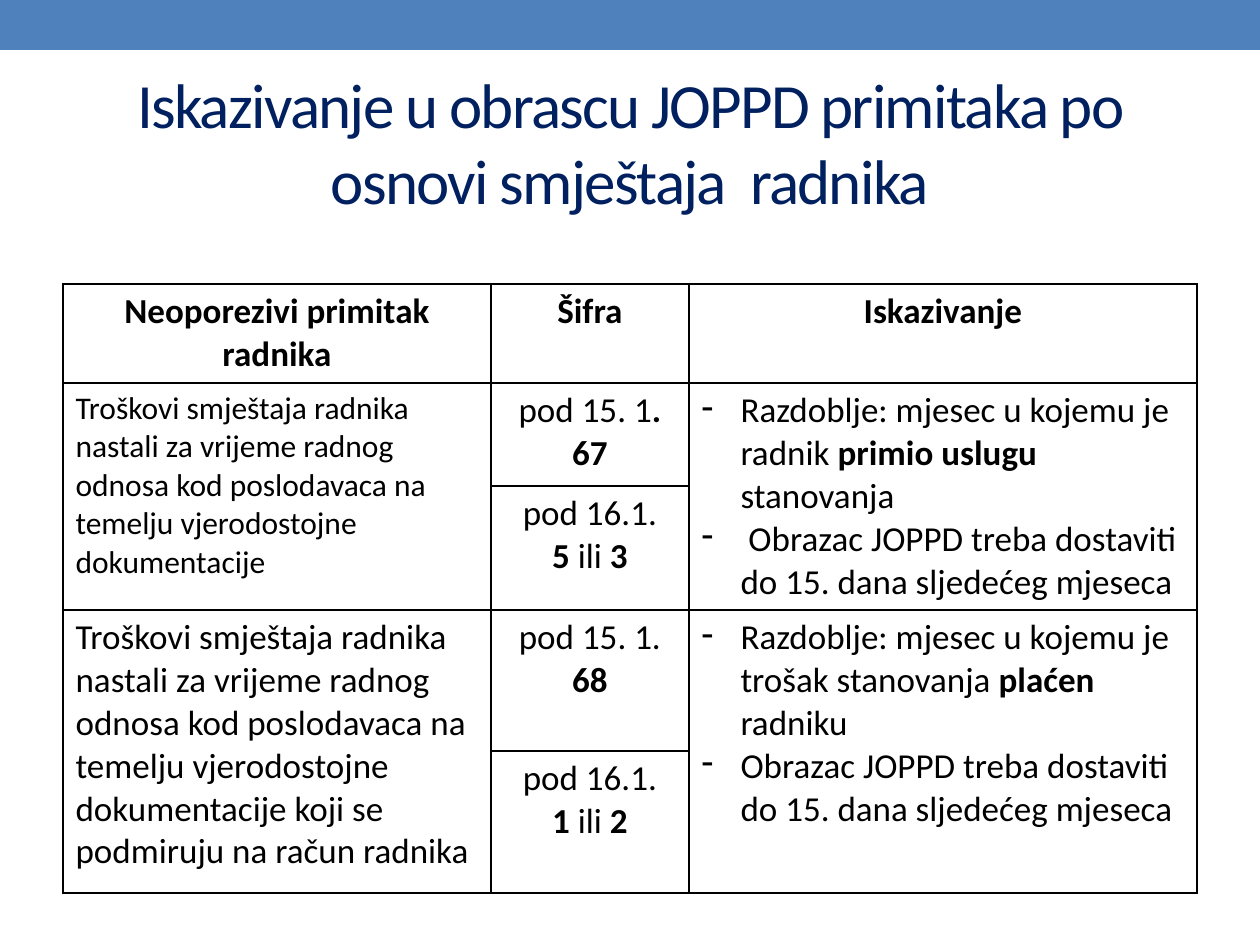
from lxml.etree import SubElement
from pptx import Presentation
from pptx.dml.color import RGBColor
from pptx.enum.shapes import MSO_SHAPE as Shape
from pptx.enum.text import MSO_ANCHOR as Anchor, MSO_AUTO_SIZE as AutoSize, PP_ALIGN as Align
from pptx.oxml import parse_xml
from pptx.oxml.ns import nsdecls, qn
from pptx.util import Emu, Pt

BLUE = RGBColor(0x4F, 0x81, 0xBD)
NAVY = RGBColor(0x00, 0x20, 0x60)
BLACK = RGBColor(0, 0, 0)
FONT = "Calibri"

TITLE = "Iskazivanje u obrascu JOPPD primitaka po osnovi smještaja  radnika"
HEADERS = ["Neoporezivi primitak radnika", "Šifra", "Iskazivanje"]
EXPENSE = ("Troškovi smještaja radnika nastali za vrijeme radnog odnosa "
           "kod poslodavaca na temelju vjerodostojne dokumentacije")
DEADLINE = "Obrazac JOPPD treba dostaviti do 15. dana sljedećeg mjeseca"
PERIOD = "Razdoblje: mjesec u kojemu je "

RECEIPTS = [
    {
        "expense": EXPENSE,
        "size": 18,
        "codes": [
            [[("pod 15. 1", False), (".", True)], [("67", True)]],
            [[("pod 16.1.", False)], [("5 ", True), ("ili", False), (" 3", True)]],
        ],
        "reporting": [
            [(PERIOD + "radnik ", False), ("primio uslugu ", True), ("stanovanja", False)],
            [(" " + DEADLINE, False)],
        ],
    },
    {
        "expense": EXPENSE + " koji se podmiruju na račun radnika",
        "size": 20,
        "codes": [
            [[("pod 15. 1.", False)], [("68", True)]],
            [[("pod 16.1.", False)], [("1 ", True), ("ili", False), (" 2", True)]],
        ],
        "reporting": [
            [(PERIOD + "trošak stanovanja ", False), ("plaćen ", True), ("radniku", False)],
            [(DEADLINE, False)],
        ],
    },
]

COLUMN_WIDTHS = [428, 198, 508]
ROW_HEIGHTS = [99, 103, 124, 141, 142]
BULLET_INDENT = 39


def px(value):
    return Emu(round(value * 914400 / 126))


def add_run(paragraph, text, size, bold, color):
    run = paragraph.add_run()
    run.text = text
    run.font.name = FONT
    run.font.size = Pt(size)
    run.font.bold = bold
    run.font.color.rgb = color
    return run


def add_dash(paragraph):
    properties = paragraph._p.get_or_add_pPr()
    properties.set("marL", str(px(BULLET_INDENT)))
    properties.set("indent", str(-px(BULLET_INDENT)))
    SubElement(properties, qn("a:buFontTx"))
    SubElement(properties, qn("a:buChar")).set("char", "-")


def fill_cell(cell, paragraphs, size=20, align=Align.LEFT, dashed=False):
    frame = cell.text_frame
    for index, runs in enumerate(paragraphs):
        paragraph = frame.add_paragraph() if index else frame.paragraphs[0]
        if dashed:
            add_dash(paragraph)
        paragraph.alignment = align
        for text, bold in runs:
            add_run(paragraph, text, size, bold, BLACK)


def style_cell(cell):
    cell.fill.background()
    properties = cell._tc.get_or_add_tcPr()
    for index, side in enumerate(("lnL", "lnR", "lnT", "lnB")):
        properties.insert(index, parse_xml(
            f'<a:{side} {nsdecls("a")} w="{Pt(1)}"><a:solidFill>'
            f'<a:srgbClr val="{BLACK}"/></a:solidFill></a:{side}>'))


def add_title(slide):
    title = slide.shapes.title
    title.left, title.top, title.width, title.height = map(px, (63, 73, 1134, 136))
    frame = title.text_frame
    frame.word_wrap = True
    frame.auto_size = AutoSize.NONE
    frame.vertical_anchor = Anchor.MIDDLE
    paragraph = frame.paragraphs[0]
    paragraph.alignment = Align.CENTER
    run = add_run(paragraph, TITLE, 36, False, NAVY)
    run.font._element.set("spc", "-100")


def add_receipts_table(slide):
    frame = slide.shapes.add_table(
        len(ROW_HEIGHTS), len(COLUMN_WIDTHS), px(63), px(284),
        px(sum(COLUMN_WIDTHS)), px(sum(ROW_HEIGHTS)))
    table = frame.table
    table.first_row = table.horz_banding = False
    for column, width in zip(table.columns, COLUMN_WIDTHS):
        column.width = px(width)
    for row, height in zip(table.rows, ROW_HEIGHTS):
        row.height = px(height)
    for cell in table.iter_cells():
        style_cell(cell)

    for column, header in enumerate(HEADERS):
        fill_cell(table.cell(0, column), [[(header, True)]], align=Align.CENTER)
    for index, receipt in enumerate(RECEIPTS):
        top = 1 + 2 * index
        for column in (0, 2):
            table.cell(top, column).merge(table.cell(top + 1, column))
        fill_cell(table.cell(top, 0), [[(receipt["expense"], False)]], receipt["size"])
        for offset, code in enumerate(receipt["codes"]):
            fill_cell(table.cell(top + offset, 1), code, align=Align.CENTER)
        fill_cell(table.cell(top, 2), receipt["reporting"], dashed=True)


def main():
    presentation = Presentation()
    presentation.slide_width = px(1260)
    presentation.slide_height = px(945)
    slide = presentation.slides.add_slide(presentation.slide_layouts[5])
    bar = slide.shapes.add_shape(Shape.RECTANGLE, 0, 0, px(1260), px(50))
    bar.shadow.inherit = False
    bar.fill.solid()
    bar.fill.fore_color.rgb = BLUE
    bar.line.fill.background()
    add_title(slide)
    add_receipts_table(slide)
    presentation.save("out.pptx")


if __name__ == "__main__":
    main()
